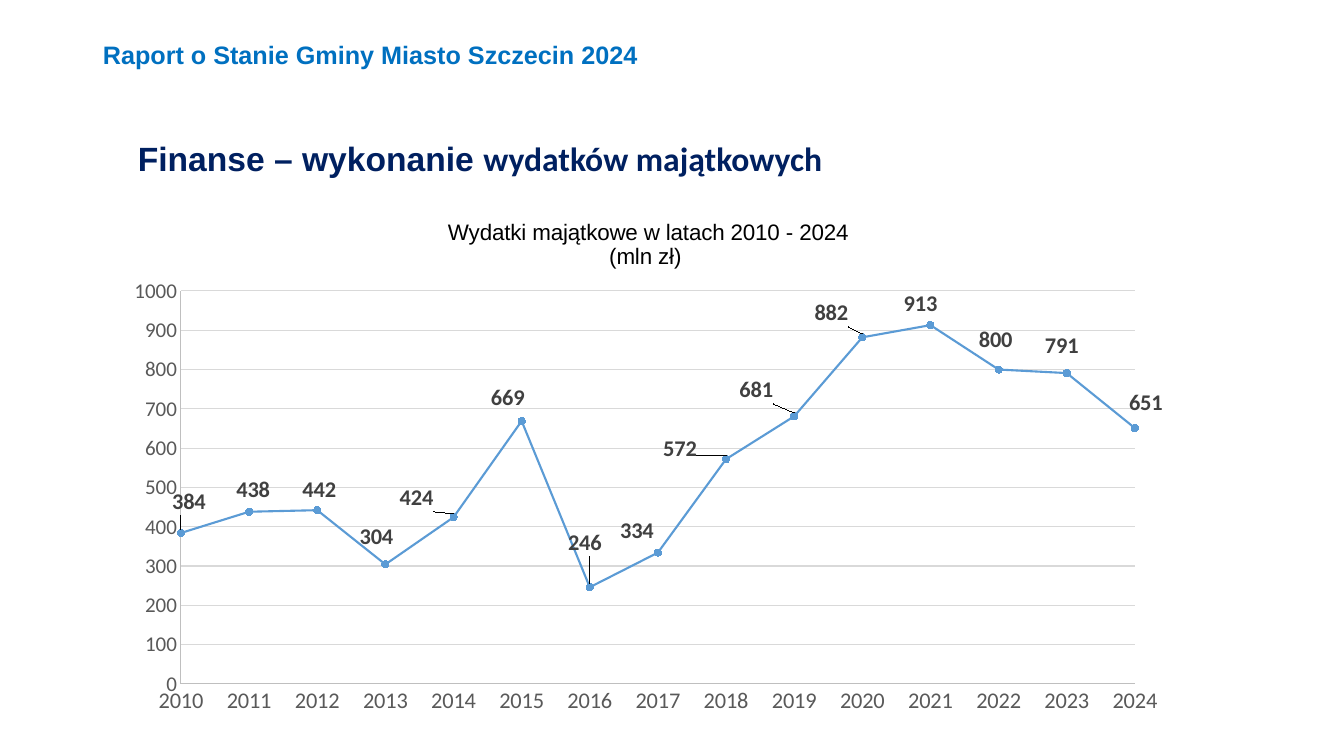
from lxml import etree
from pptx import Presentation
from pptx.chart.data import XyChartData
from pptx.dml.color import RGBColor
from pptx.enum.chart import XL_CHART_TYPE, XL_LABEL_POSITION, XL_MARKER_STYLE, XL_TICK_MARK
from pptx.enum.text import MSO_ANCHOR
from pptx.oxml.ns import qn
from pptx.util import Pt

PX = 914400 / 100.8
SCATTER = XL_CHART_TYPE.XY_SCATTER_LINES
ABOVE = XL_LABEL_POSITION.ABOVE
CIRCLE = XL_MARKER_STYLE.CIRCLE
NO_TICK = XL_TICK_MARK.NONE
MIDDLE, TOP = MSO_ANCHOR.MIDDLE, MSO_ANCHOR.TOP

BLACK = RGBColor(0x00, 0x00, 0x00)
HEADER_BLUE = RGBColor(0x00, 0x70, 0xC0)
NAVY = RGBColor(0x00, 0x20, 0x60)
LINE_BLUE = RGBColor(0x5B, 0x9B, 0xD5)
LABEL_GREY = RGBColor(0x40, 0x40, 0x40)
AXIS_TEXT = RGBColor(0x59, 0x59, 0x59)
AXIS_LINE = RGBColor(0xBF, 0xBF, 0xBF)
GRID_GREY = RGBColor(0xD9, 0xD9, 0xD9)

FIRST_YEAR = 2010
SPENDING = [384, 438, 442, 304, 424, 669, 246, 334, 572, 681, 882, 913, 800, 791, 651]
LABEL_SHIFTS = [(8, -10), (4, 0), (2, 1), (-9, -6), (-37, 2), (-14, -2), (-5, -23), (-21, 0),
                (-46, 11), (-38, -5), (-31, -3), (-10, 0), (-3, -8), (-5, -6), (11, -4)]


def px(length):
    """Turn pixels into EMU."""
    return round(length * PX)


def set_font(font, name, size, color, bold=False):
    """Give a font its face, size, colour and weight."""
    for key, value in {"name": name, "size": Pt(size), "bold": bold}.items():
        setattr(font, key, value)
    font.color.rgb = color


def set_line(line, color, width):
    """Give a line its colour and width in points."""
    line.color.rgb = color
    line.width = Pt(width)


def add_layout(before, **values):
    """Put a manual layout after the given chart element."""
    layout = etree.Element(qn("c:layout"))
    manual = etree.SubElement(layout, qn("c:manualLayout"))
    for tag, value in values.items():
        text = value if isinstance(value, str) else f"{value:.4f}"
        etree.SubElement(manual, qn("c:" + tag)).set("val", text)
    before.addnext(layout)


def add_heading(page, box, spans, size, color, anchor=TOP, bottom=5, **spacing):
    """Place one line of bold text made of (text, font name) spans."""
    frame = page.shapes.add_textbox(*map(px, box)).text_frame
    settings = {"word_wrap": True, "vertical_anchor": anchor, "margin_bottom": px(bottom)}
    for key, value in settings.items():
        setattr(frame, key, value)
    para = frame.paragraphs[0]
    for key, value in spacing.items():
        setattr(para, key, value)
    for text, name in spans:
        span = para.add_run()
        span.text = text
        set_font(span.font, name, size, color, True)


def add_chart_title(chart, lines, left, top):
    """Write the chart title with its corner at a fraction of the chart."""
    title = chart.chart_title
    frame = title.text_frame
    for index, text in enumerate(lines):
        para = frame.add_paragraph() if index else frame.paragraphs[0]
        span = para.add_run()
        span.text = text
        set_font(span.font, "Arial", 16, BLACK)
    title.include_in_layout = False
    node = chart.element.find(".//" + qn("c:title"))
    for old in node.findall(qn("c:layout")):
        node.remove(old)
    add_layout(node.find(qn("c:tx")), xMode="edge", yMode="edge", x=left, y=top)


def style_axis(axis, size, low, high, step):
    """Set the scale, the text and the line of one axis."""
    settings = {"minimum_scale": low, "maximum_scale": high, "major_unit": step,
                "major_tick_mark": NO_TICK, "minor_tick_mark": NO_TICK,
                "has_major_gridlines": False}
    for key, value in settings.items():
        setattr(axis, key, value)
    set_font(axis.tick_labels.font, "Calibri", size, AXIS_TEXT)
    set_line(axis.format.line, AXIS_LINE, 0.75)


def add_spending_chart(page, box):
    """Place the line chart of yearly spending in its box."""
    left, top, width, height = box
    data = XyChartData()
    points = data.add_series("Series 1")
    for year, amount in enumerate(SPENDING, FIRST_YEAR):
        points.add_data_point(year, amount)
    chart = page.shapes.add_chart(SCATTER, *map(px, box), data).chart
    chart.has_legend = False
    set_font(chart.font, "Calibri", 10, BLACK)
    add_chart_title(chart, ["Wydatki majątkowe w latach 2010 - 2024", "(mln zł) "],
                    332 / width, 22 / height)

    style_axis(chart.category_axis, 16, FIRST_YEAR, FIRST_YEAR + len(SPENDING) - 1, 1)
    style_axis(chart.value_axis, 15, 0, 1000, 100)
    chart.value_axis.has_major_gridlines = True
    set_line(chart.value_axis.major_gridlines.format.line, GRID_GREY, 0.75)

    plot = chart.plots[0]
    plot.vary_by_categories = False
    series = plot.series[0]
    series.smooth = False
    set_line(series.format.line, LINE_BLUE, 1.5)
    marker = series.marker
    marker.style, marker.size = CIRCLE, 5
    marker.format.fill.solid()
    marker.format.fill.fore_color.rgb = LINE_BLUE
    marker.format.line.color.rgb = LINE_BLUE

    for index in range(len(SPENDING)):
        label = series.points[index].data_label
        set_font(label.font, "Calibri", 16, LABEL_GREY, True)
        label.position = ABOVE
    for node, (across, down) in zip(chart.element.iter(qn("c:dLbl")), LABEL_SHIFTS):
        add_layout(node.find(qn("c:idx")), x=across / width, y=down / height)

    area = chart.element.find(".//" + qn("c:plotArea"))
    for old in area.findall(qn("c:layout")):
        area.remove(old)
    anchor = etree.Element(qn("c:layout"))
    area.insert(0, anchor)
    add_layout(anchor, layoutTarget="inner", xMode="edge", yMode="edge",
               x=68 / width, y=98 / height, w=954 / width, h=393 / height)
    area.remove(anchor)


def build_finance_slide(deck):
    """Build the slide on capital spending."""
    page = deck.slides.add_slide(deck.slide_layouts[6])
    add_heading(page, (93, 31, 589, 79), [("Raport o Stanie Gminy Miasto Szczecin 2024", "Arial")],
                18, HEADER_BLUE, MIDDLE, 34, line_spacing=0.9)
    add_heading(page, (128, 133, 1076, 50),
                [("Finanse – wykonanie ", "Arial"), ("wydatków majątkowych", "Calibri")],
                24, NAVY, space_after=Pt(6))
    add_spending_chart(page, (113, 193, 1066, 533))


def main():
    """Make the deck and save it."""
    deck = Presentation()
    deck.slide_width, deck.slide_height = px(1344), px(756)
    build_finance_slide(deck)
    deck.save("out.pptx")


if __name__ == "__main__":
    main()
